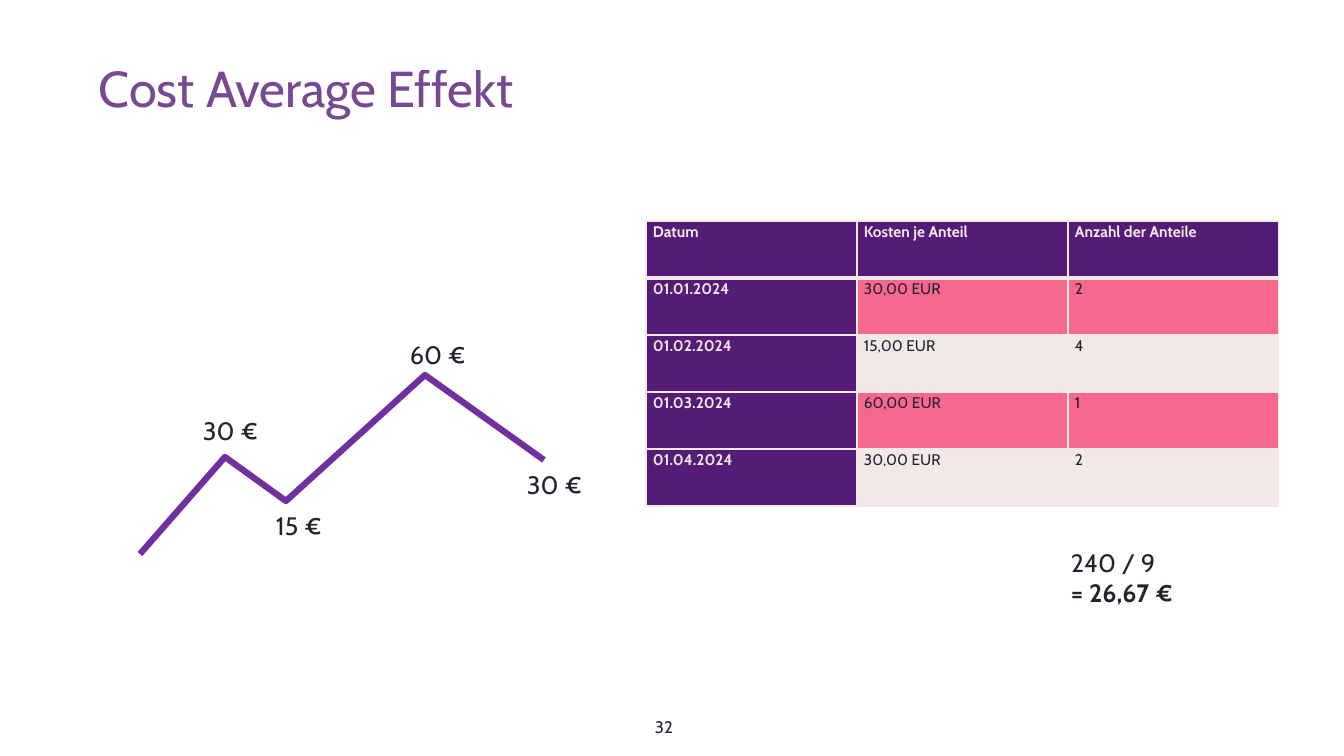
from lxml.etree import SubElement
from pptx import Presentation
from pptx.dml.color import RGBColor
from pptx.enum.text import MSO_ANCHOR, MSO_AUTO_SIZE
from pptx.oxml.ns import qn
from pptx.util import Emu, Pt

# Scale and colours
SCALE = 914400 / 100.8
PLUM = RGBColor(0x55, 0x1C, 0x77)
VIOLET = RGBColor(0x70, 0x30, 0xA0)
PINK = RGBColor(0xF6, 0x68, 0x8E)
SAND = RGBColor(0xF0, 0xE9, 0xE5)
INK = RGBColor(0x25, 0x21, 0x31)
FONT = "Cabin"

# Content
CURVE = [(140, 554), (225, 457), (286, 501), (425, 375), (544, 460)]
PRICES = [
    ("30 €", 193, 410, 76),
    ("15 €", 266, 505, 76),
    ("60 €", 400, 334, 90),
    ("30 €", 517, 464, 76),
]
ROWS = [
    ("Datum", "Kosten je Anteil", "Anzahl der Anteile"),
    ("01.01.2024", "30,00 EUR", "2"),
    ("01.02.2024", "15,00 EUR", "4"),
    ("01.03.2024", "60,00 EUR", "1"),
    ("01.04.2024", "30,00 EUR", "2"),
]


def px(size):
    return Emu(round(size * SCALE))


def put(item, form):
    for name, value in form.items():
        setattr(item, name, value)


def write(para, text, size, color=INK, bold=False):
    run = para.add_run()
    run.text = text
    put(run.font, {"name": FONT, "size": Pt(size), "bold": bold})
    run.font.color.rgb = color
    return run


def add_text(slide, box, lines, size, form=None, color=INK):
    """Place a text box; each line is a (text, bold) pair."""
    frame = slide.shapes.add_textbox(*map(px, box)).text_frame
    put(frame, {"word_wrap": True, **(form or {})})
    for i, (text, bold) in enumerate(lines):
        para = frame.add_paragraph() if i else frame.paragraphs[0]
        write(para, text, size, color, bold)
    return frame


def add_title(slide, text):
    form = {"vertical_anchor": MSO_ANCHOR.MIDDLE}
    frame = add_text(slide, (89, 53, 1036, 77), [(text, False)], 36, form, PLUM)
    para = frame.paragraphs[0]
    para.line_spacing = 0.9
    tint = next(para.runs[0].font.fill._xPr.iter(qn("a:srgbClr")))
    SubElement(tint, qn("a:alpha"), val="80000")


def add_curve(slide, points):
    pen = slide.shapes.build_freeform(*points[0], scale=SCALE)
    pen.add_line_segments(points[1:], close=False)
    shape = pen.convert_to_shape()
    shape.shadow.inherit = False
    shape.fill.background()
    shape.line.color.rgb = VIOLET
    shape.line.width = Pt(4.5)


def add_edges(cell, widths):
    props = cell._tc.get_or_add_tcPr()
    for side, width in widths.items():
        line = SubElement(props, qn(f"a:ln{side}"), w=str(Pt(width)))
        fill = SubElement(line, qn("a:solidFill"))
        SubElement(fill, qn("a:srgbClr"), val=str(SAND))


def fill_cell(cell, text, row, col):
    head = row == 0 or col == 0
    put(cell, {"margin_left": px(7), "margin_right": px(7),
               "margin_top": 0, "margin_bottom": 0})
    add_edges(cell, {"L": 1, "R": 1, "T": 3 if row == 1 else 1,
                     "B": 3 if row == 0 else 1})
    cell.fill.solid()
    cell.fill.fore_color.rgb = PLUM if head else PINK if row % 2 else SAND
    para = cell.text_frame.paragraphs[0]
    put(para, {"line_spacing": 1.07, "space_after": Pt(8)})
    write(para, text, 11, SAND if head else INK, head)


def add_grid(slide, rows, left, top, wide, high):
    count = len(rows[0])
    box = (left, top, wide * count, high * len(rows))
    table = slide.shapes.add_table(len(rows), count, *map(px, box)).table
    table.first_col = True
    for col in table.columns:
        col.width = px(wide)
    for r, texts in enumerate(rows):
        table.rows[r].height = px(high)
        for c, text in enumerate(texts):
            fill_cell(table.cell(r, c), text, r, c)


def main():
    deck = Presentation()
    put(deck, {"slide_width": px(1344), "slide_height": px(756)})
    slide = deck.slides.add_slide(deck.slide_layouts[6])
    grow = {"auto_size": MSO_AUTO_SIZE.SHAPE_TO_FIT_TEXT}

    # Title and page number
    add_title(slide, "Cost Average Effekt")
    add_text(slide, (645, 707, 77, 40), [("32", False)], 12,
             {"vertical_anchor": MSO_ANCHOR.MIDDLE})

    # Price curve with labels
    add_curve(slide, CURVE)
    for text, left, top, wide in PRICES:
        add_text(slide, (left, top, wide, 40), [(text, False)], 18, grow)

    # Purchases and average price
    add_grid(slide, ROWS, 646, 221, 211, 57)
    add_text(slide, (1061, 542, 154, 102),
             [("240 / 9", False), ("= 26,67 €", True)], 18, grow)

    deck.save("out.pptx")


if __name__ == "__main__":
    main()
